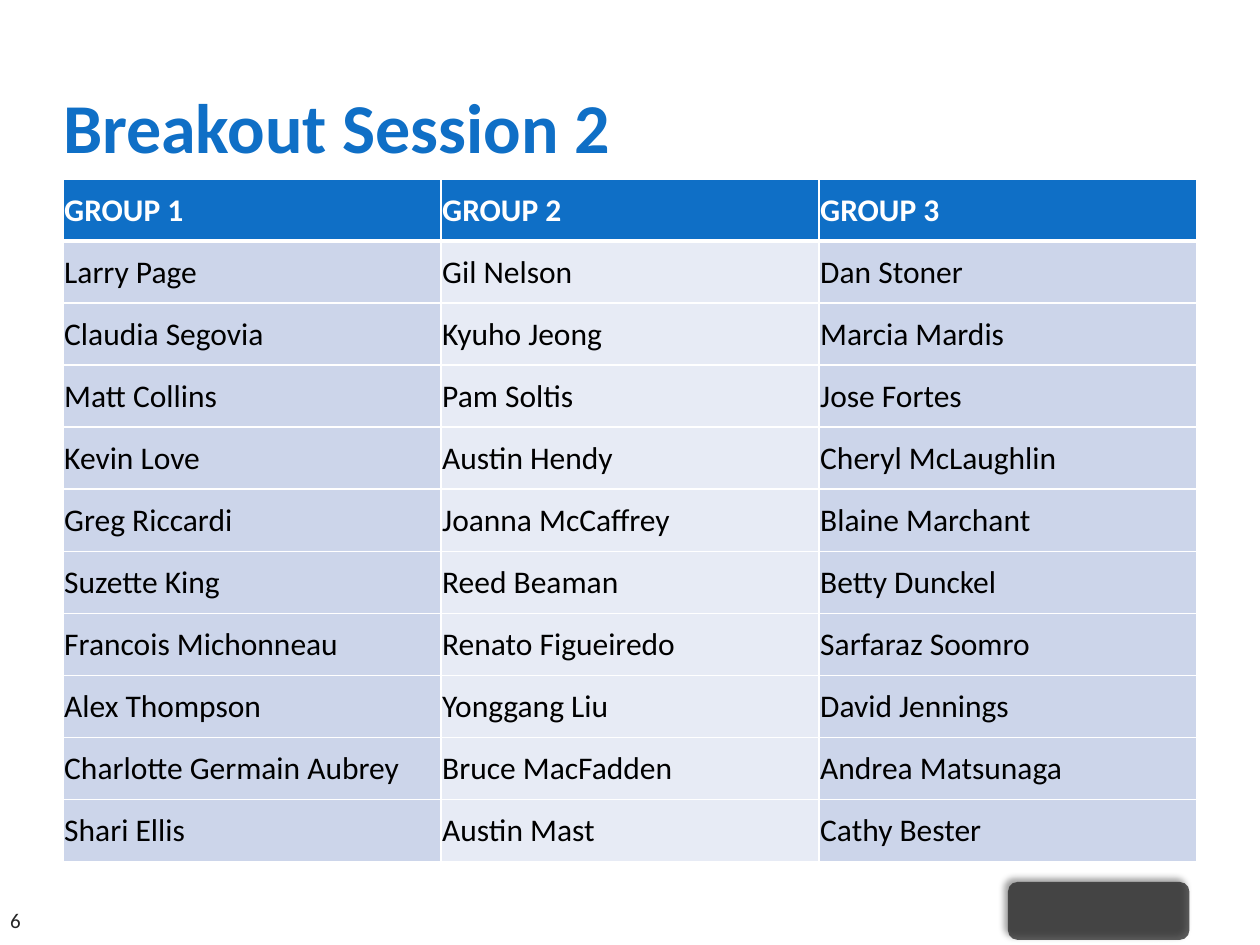
"""Build the Breakout Session 2 slide with its table of groups."""
from lxml import etree
from pptx import Presentation
from pptx.dml.color import RGBColor
from pptx.enum.shapes import MSO_SHAPE
from pptx.enum.text import MSO_ANCHOR, PP_ALIGN
from pptx.oxml.ns import qn
from pptx.util import Inches, Pt

BADGE_SHAPE = MSO_SHAPE.ROUNDED_RECTANGLE
MIDDLE, BOTTOM = MSO_ANCHOR.MIDDLE, MSO_ANCHOR.BOTTOM
LEFT = PP_ALIGN.LEFT

FONT = "Calibri"
COLORS = {
    "blue": "0F6FC6",
    "white": "FFFFFF",
    "black": "000000",
    "charcoal": "262626",
    "outer_column": "CCD5EA",
    "inner_column": "E7EBF5",
}
WIDTH, HEIGHT = 10, 7.5
MARGIN = WIDTH / 20
CONTENT_WIDTH = WIDTH - 2 * MARGIN
TABLE_TOP, TABLE_HEIGHT = 1.42, 5.42
FOOTER_TOP = 7

GROUPS = {
    "GROUP 1": [
        "Larry Page", "Claudia Segovia", "Matt Collins", "Kevin Love",
        "Greg Riccardi", "Suzette King", "Francois Michonneau",
        "Alex Thompson", "Charlotte Germain Aubrey", "Shari Ellis",
    ],
    "GROUP 2": [
        "Gil Nelson", "Kyuho Jeong", "Pam Soltis", "Austin Hendy",
        "Joanna McCaffrey", "Reed Beaman", "Renato Figueiredo",
        "Yonggang Liu", "Bruce MacFadden", "Austin Mast",
    ],
    "GROUP 3": [
        "Dan Stoner", "Marcia Mardis", "Jose Fortes", "Cheryl McLaughlin",
        "Blaine Marchant", "Betty Dunckel", "Sarfaraz Soomro",
        "David Jennings", "Andrea Matsunaga", "Cathy Bester",
    ],
}


def rgb(name):
    """Return the named colour."""
    return RGBColor.from_string(COLORS[name])


def box(left, top, width, height):
    """Convert a rectangle in inches to lengths."""
    return [Inches(value) for value in (left, top, width, height)]


def add_color(parent, name, alpha=100):
    """Add a colour element with an opacity in percent."""
    color = etree.SubElement(parent, qn("a:srgbClr"), val=COLORS[name])
    etree.SubElement(color, qn("a:alpha"), val=str(alpha * 1000))


def write(frame, text, size, color, bold=False):
    """Write one left-aligned line in the slide's font."""
    frame.text = text
    line = frame.paragraphs[0]
    line.alignment = LEFT
    font = line.runs[0].font
    font.name, font.size, font.bold = FONT, Pt(size), bold
    font.color.rgb = rgb(color)


def set_insets(frame, top=0):
    """Remove the margins of a text frame, except the top one."""
    frame.margin_left = frame.margin_right = frame.margin_bottom = 0
    frame.margin_top = Inches(top)
    frame.vertical_anchor = BOTTOM
    frame.word_wrap = True


def add_title(slide, text):
    """Place and format the title placeholder."""
    title = slide.shapes.title
    title.left, title.top, title.width, title.height = box(
        MARGIN, 0.58, CONTENT_WIDTH, HEIGHT / 10)
    set_insets(title.text_frame, top=0.05)
    write(title.text_frame, text, 40, "blue", bold=True)


def add_badge(slide):
    """Add the translucent footer badge with its shadow."""
    badge = slide.shapes.add_shape(BADGE_SHAPE, *box(8, FOOTER_TOP, 1.44, 0.46))
    badge.fill.solid()
    badge.fill.fore_color.rgb = rgb("charcoal")
    badge.line.fill.background()
    badge.shadow.inherit = False
    properties = badge.element.spPr
    fill_color = properties.find(qn("a:solidFill")).find(qn("a:srgbClr"))
    etree.SubElement(fill_color, qn("a:alpha"), val="75000")
    shadow = etree.SubElement(
        properties.find(qn("a:effectLst")), qn("a:outerShdw"),
        blurRad=str(Pt(4)), dist=str(Pt(3)), dir=str(225 * 60000))
    add_color(shadow, "black", 50)


def add_page_number(slide, number):
    """Add the page number at the lower left."""
    frame = slide.shapes.add_textbox(*box(0.08, FOOTER_TOP, 0.5, 0.4)).text_frame
    set_insets(frame)
    write(frame, number, 12, "charcoal")


def set_borders(cell, top, bottom):
    """Draw white borders, with the given top and bottom widths."""
    properties = cell._tc.get_or_add_tcPr()
    for side, width in zip("LRTB", (1, 1, top, bottom)):
        border = etree.SubElement(properties, qn(f"a:ln{side}"), w=str(Pt(width)))
        add_color(etree.SubElement(border, qn("a:solidFill")), "white")


def format_cell(cell, text, row, column):
    """Fill in one cell as a heading or as a name."""
    heading = row == 0
    cell.margin_left = cell.margin_right = cell.margin_top = Inches(0.01)
    cell.margin_bottom = 0
    cell.vertical_anchor = MIDDLE
    write(cell.text_frame, text, 18, "white" if heading else "black", heading)
    set_borders(cell, 3 if row == 1 else 1, 3 if heading else 1)
    column_color = "inner_column" if column % 2 else "outer_column"
    cell.fill.solid()
    cell.fill.fore_color.rgb = rgb("blue" if heading else column_color)


def add_groups(slide, groups):
    """Add the table with one column for each group."""
    columns = [[heading, *names] for heading, names in groups.items()]
    row_count = len(columns[0])
    table = slide.shapes.add_table(
        row_count, len(columns),
        *box(MARGIN, TABLE_TOP, CONTENT_WIDTH, TABLE_HEIGHT)).table
    for row in table.rows:
        row.height = Inches(TABLE_HEIGHT / row_count)
    for column, texts in enumerate(columns):
        for row, text in enumerate(texts):
            format_cell(table.cell(row, column), text, row, column)


def main():
    """Build and save the slide."""
    presentation = Presentation()
    presentation.slide_width, presentation.slide_height = Inches(WIDTH), Inches(HEIGHT)
    slide = presentation.slides.add_slide(presentation.slide_layouts[5])
    add_badge(slide)
    add_title(slide, "Breakout Session 2")
    add_page_number(slide, "6")
    add_groups(slide, GROUPS)
    presentation.save("out.pptx")


if __name__ == "__main__":
    main()
